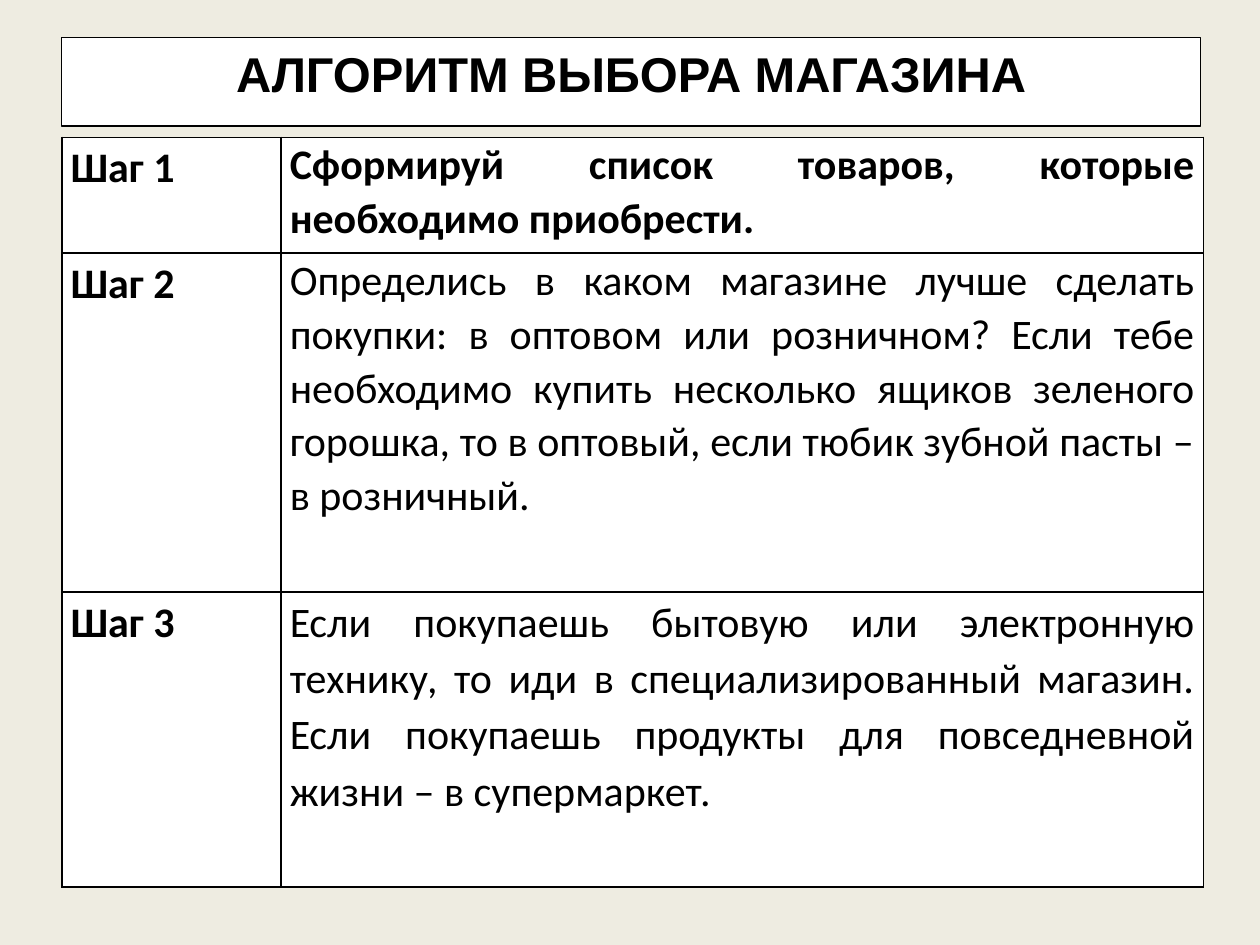
import pptx
import pptx.util
import pptx.dml.color
import pptx.enum.text
import pptx.oxml
import pptx.oxml.ns

ALIGN = pptx.enum.text.PP_ALIGN
ANCHOR = pptx.enum.text.MSO_ANCHOR
INK, PAPER, SAND = "000000", "FFFFFF", "EEECE1"
LEFT = 0.49
COLS = [1.74, 7.32]
ROWS = [0.92, 2.69, 2.34]
STEPS = [
    ("Сформируй список товаров, которые необходимо приобрести.", True, 1.05),
    ("Определись в каком магазине лучше сделать покупки: в оптовом или "
     "розничном? Если тебе необходимо купить несколько ящиков зеленого "
     "горошка, то в оптовый, если тюбик зубной пасты – в розничный.", False, 1.05),
    ("Если покупаешь бытовую или электронную технику, то иди в "
     "специализированный магазин. Если покупаешь продукты для повседневной "
     "жизни – в супермаркет.", False, 1.1),
]


def inch(num):
    return pptx.util.Inches(num)


def paint(fill, tone):
    fill.solid()
    fill.fore_color.rgb = pptx.dml.color.RGBColor.from_string(tone)


def write(frame, text, size=24, font="Calibri", bold=False,
          align=ALIGN.JUSTIFY, space=1.0):
    para = frame.paragraphs[0]
    para.alignment = align
    para.line_spacing = space
    run = para.add_run()
    run.text = text
    run.font.size = pptx.util.Pt(size)
    run.font.name = font
    run.font.bold = bold
    paint(run.font.fill, INK)


def head(slide):
    box = slide.shapes.title
    box.left, box.top = inch(LEFT), inch(0.3)
    box.width, box.height = inch(9.04), inch(0.7)
    paint(box.fill, PAPER)
    paint(box.line.fill, INK)
    box.line.width = pptx.util.Pt(0.75)
    frame = box.text_frame
    frame.auto_size = pptx.enum.text.MSO_AUTO_SIZE.NONE
    frame.vertical_anchor = ANCHOR.TOP
    write(frame, "АЛГОРИТМ ВЫБОРА МАГАЗИНА", size=27.9, font="Arial",
          bold=True, align=ALIGN.CENTER)


def edge(cell):
    props = cell._tc.get_or_add_tcPr()
    space = pptx.oxml.ns.nsdecls("a")
    for spot, side in enumerate("LRTB"):
        props.insert(spot, pptx.oxml.parse_xml(
            f'<a:ln{side} {space} w="12700"><a:solidFill>'
            f'<a:srgbClr val="{INK}"/></a:solidFill></a:ln{side}>'))


def fill_cell(cell, text, **form):
    cell.margin_left = cell.margin_right = inch(0.07)
    cell.margin_top = cell.margin_bottom = 0
    cell.vertical_anchor = ANCHOR.TOP
    paint(cell.fill, PAPER)
    edge(cell)
    write(cell.text_frame, text, **form)


def grid(slide):
    table = slide.shapes.add_table(
        len(ROWS), len(COLS), inch(LEFT), inch(1.09),
        inch(sum(COLS)), inch(sum(ROWS))).table
    table.first_row = table.horz_banding = False
    for col, width in zip(table.columns, COLS):
        col.width = inch(width)
    for row, height in zip(table.rows, ROWS):
        row.height = inch(height)
    for num, (text, bold, space) in enumerate(STEPS):
        fill_cell(table.cell(num, 0), f"Шаг {num + 1}", bold=True, space=1.1)
        fill_cell(table.cell(num, 1), text, bold=bold, space=space)


def main():
    deck = pptx.Presentation()
    deck.slide_width, deck.slide_height = inch(10), inch(7.5)
    slide = deck.slides.add_slide(deck.slide_layouts[5])
    paint(slide.background.fill, SAND)
    head(slide)
    grid(slide)
    deck.save("out.pptx")


if __name__ == "__main__":
    main()
